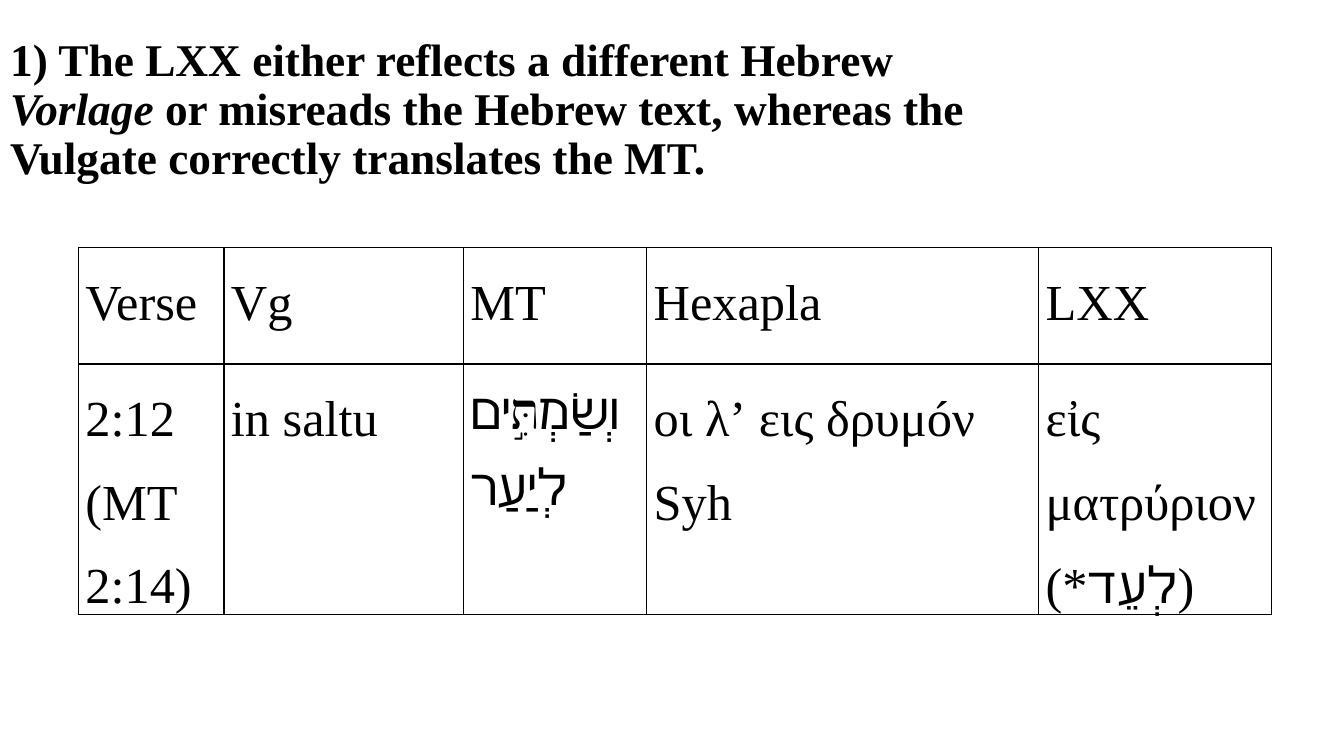
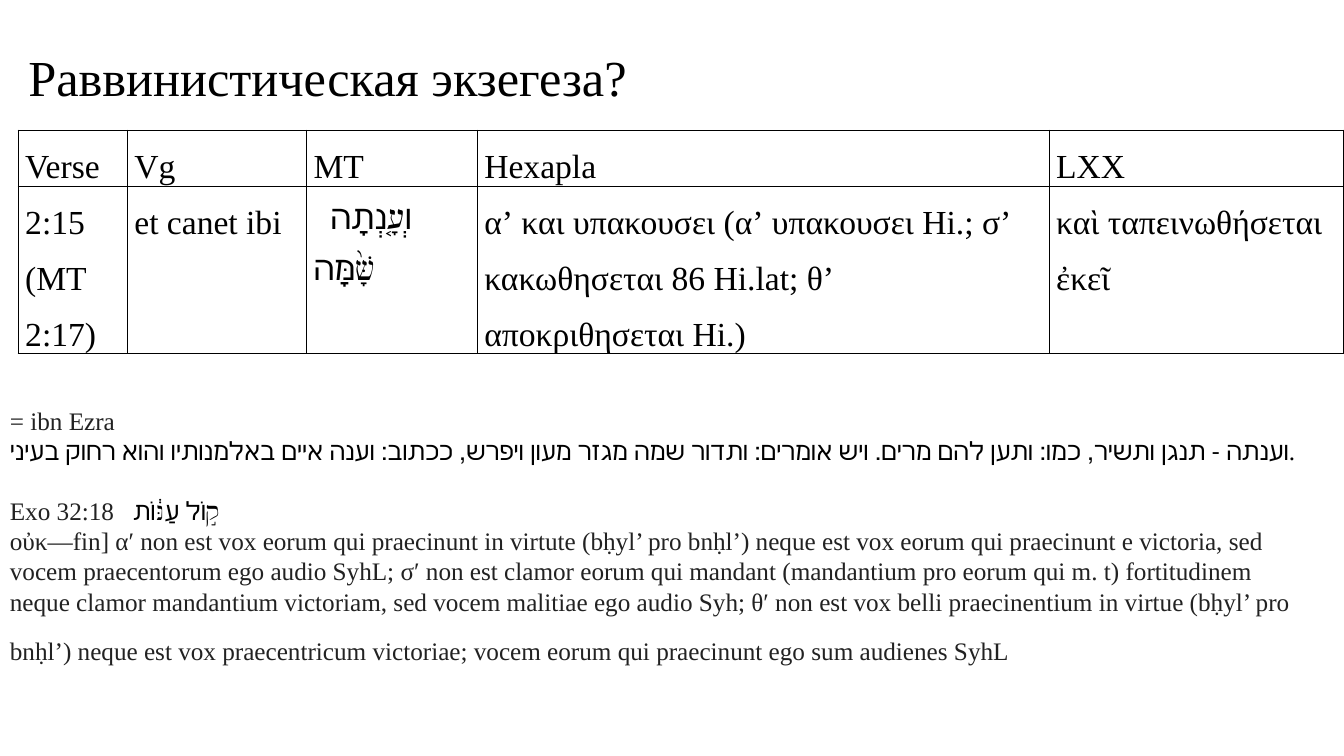
"""Build two slides comparing Vulgate readings with the Hebrew and Greek witnesses."""
from dataclasses import dataclass

from lxml import etree
from pptx import Presentation
from pptx.dml.color import RGBColor
from pptx.enum import text
from pptx.oxml import ns
from pptx.util import Pt

COLOURS = {"ink": "000000", "note": "222222", "background": "FFFFFF"}
FONT = "Times New Roman"
HEADERS = ("Verse", "Vg", "MT", "Hexapla", "LXX")
LEFT = text.PP_ALIGN.LEFT
JUSTIFY = text.PP_ALIGN.JUSTIFY


@dataclass(frozen=True)
class Span:
    content: str
    colour: str = "ink"
    bold: bool = False
    italic: bool = False


@dataclass(frozen=True)
class Line:
    spans: tuple[Span, ...]
    align: text.PP_ALIGN = LEFT
    spacing: float = 1.0
    before: float = 0
    indent: float = 0
    tab: float = 0


@dataclass(frozen=True)
class Box:
    left: float
    top: float
    width: float
    height: float


@dataclass(frozen=True)
class Comparison:
    left: float
    top: float
    columns: tuple[float, ...]
    rows: tuple[float, ...]
    size: float
    readings: tuple[tuple[Line, ...], ...]


def plain(content: str, align: text.PP_ALIGN = LEFT, indent: float = 0) -> Line:
    return Line((Span(content),), align, spacing=1.5, indent=indent)


def note(content: str, colour: str = "note", before: float = 0) -> Line:
    return Line((Span(content, colour),), before=before)


def write(frame, lines: tuple[Line, ...], size: float) -> None:
    for index, line in enumerate(lines):
        paragraph = frame.add_paragraph() if index else frame.paragraphs[0]
        paragraph.alignment = line.align
        paragraph.line_spacing = line.spacing
        paragraph.space_before = Pt(line.before)
        properties = paragraph._p.get_or_add_pPr()
        if line.indent:
            properties.set("marL", "0")
            properties.set("indent", str(Pt(line.indent)))
        if line.tab:
            stops = etree.SubElement(properties, ns.qn("a:tabLst"))
            etree.SubElement(stops, ns.qn("a:tab"), pos=str(Pt(line.tab)), algn="l")
        for span in line.spans:
            run = paragraph.add_run()
            run.text = span.content
            run.font.name = FONT
            run.font.size = Pt(size)
            run.font.bold = span.bold
            run.font.italic = span.italic
            run.font.color.rgb = RGBColor.from_string(COLOURS[span.colour])


def add_titled_slide(presentation, box: Box, spans: tuple[Span, ...], size: float):
    slide = presentation.slides.add_slide(presentation.slide_layouts[5])
    slide.background.fill.solid()
    slide.background.fill.fore_color.rgb = RGBColor.from_string(COLOURS["background"])
    title = slide.shapes.title
    title.left, title.top = Pt(box.left), Pt(box.top)
    title.width, title.height = Pt(box.width), Pt(box.height)
    frame = title.text_frame
    frame.word_wrap = True
    frame.auto_size = text.MSO_AUTO_SIZE.NONE
    frame.vertical_anchor = text.MSO_ANCHOR.MIDDLE
    write(frame, (Line(spans, spacing=0.9),), size)
    return slide


def add_borders(cell) -> None:
    properties = cell._tc.get_or_add_tcPr()
    for side in ("lnL", "lnR", "lnT", "lnB"):
        border = etree.SubElement(properties, ns.qn(f"a:{side}"), w=str(Pt(1)))
        fill = etree.SubElement(border, ns.qn("a:solidFill"))
        etree.SubElement(fill, ns.qn("a:srgbClr"), val=COLOURS["ink"])


def add_comparison(slide, comparison: Comparison) -> None:
    table = slide.shapes.add_table(
        len(comparison.rows), len(comparison.columns),
        Pt(comparison.left), Pt(comparison.top),
        Pt(sum(comparison.columns)), Pt(sum(comparison.rows)),
    ).table
    table.first_row = False
    table.horz_banding = False
    for column, width in zip(table.columns, comparison.columns):
        column.width = Pt(width)
    for row, height in zip(table.rows, comparison.rows):
        row.height = Pt(height)
    headings = tuple((plain(header, JUSTIFY),) for header in HEADERS)
    for row, contents in zip(table.rows, (headings, comparison.readings)):
        for cell, lines in zip(row.cells, contents):
            cell.margin_left = cell.margin_right = Pt(5)
            cell.margin_top = cell.margin_bottom = Pt(0)
            add_borders(cell)
            cell.fill.background()
            write(cell.text_frame, lines, comparison.size)


def add_notes_box(slide, box: Box, lines: tuple[Line, ...], size: float) -> None:
    shape = slide.shapes.add_textbox(
        Pt(box.left), Pt(box.top), Pt(box.width), Pt(box.height))
    shape.text_frame.word_wrap = True
    write(shape.text_frame, lines, size)


def build_vorlage_slide(presentation) -> None:
    slide = add_titled_slide(presentation, Box(0, 0, 703, 158), (
        Span("1) The LXX either reflects a different Hebrew ", bold=True),
        Span("Vorlage", bold=True, italic=True),
        Span(" or misreads the Hebrew text, whereas the Vulgate correctly "
             "translates the MT.", bold=True),
    ), 32.4)
    add_comparison(slide, Comparison(
        56, 177, (104, 171, 131, 280, 166), (83, 151), 36, (
            (plain("2:12 (MT 2:14)"),),
            (plain("in saltu"),),
            (plain("וְשַׂמְתִּ֣ים לְיַעַר"),),
            (plain("οι λʼ εις δρυμóν Syh"),),
            (plain("εἰς ματρύριον"), plain("(*לְעֵד)")),
        )))


def build_exegesis_slide(presentation) -> None:
    slide = add_titled_slide(presentation, Box(13, 0, 600, 115),
                             (Span("Раввинистическая экзегеза?"),), 36)
    add_comparison(slide, Comparison(
        13, 93, (78, 128, 122, 408.5, 210), (40, 117), 24, (
            (plain("2:15 (MT 2:17)", JUSTIFY),),
            (plain("et canet ibi"),),
            (plain("וְעָ֤נְתָה שָּׁ֙מָּה", indent=12),),
            (plain("αʼ και υπακουσει (αʼ υπακουσει Hi.; σʼ κακωθησεται 86 Hi.lat; "
                   "θʼ αποκριθησεται Hi.)"),),
            (plain("καὶ ταπεινωθήσεται ἐκεῖ"),),
        )))
    add_notes_box(slide, Box(0, 286, 947, 199), (
        note("= ibn Ezra"),
        note("וענתה - תנגן ותשיר, כמו: ותען להם מרים. ויש אומרים: ותדור שמה מגזר מעון "
             "ויפרש, ככתוב: וענה איים באלמנותיו והוא רחוק בעיני.", "ink"),
        Line((Span("Exo 32:18\t", "note"), Span("ק֣וֹל עַנּ֔וֹת")), before=21, tab=88),
        note("οὐκ—fin] αʹ non est vox eorum qui praecinunt in virtute (bḥyl’ pro bnḥl’) "
             "neque est vox eorum qui praecinunt e victoria, sed vocem praecentorum ego "
             "audio SyhL; σʹ non est clamor eorum qui mandant (mandantium pro eorum qui "
             "m. t) fortitudinem neque clamor mandantium victoriam, sed vocem malitiae "
             "ego audio Syh; θʹ non est vox belli praecinentium in virtue (bḥyl’ pro"),
        note("bnḥl’) neque est vox praecentricum victoriae; vocem eorum qui praecinunt "
             "ego sum audienes SyhL", before=14),
    ), 18)


def main() -> None:
    presentation = Presentation()
    presentation.slide_width, presentation.slide_height = Pt(960), Pt(540)
    build_vorlage_slide(presentation)
    build_exegesis_slide(presentation)
    presentation.save("out.pptx")


if __name__ == "__main__":
    main()
